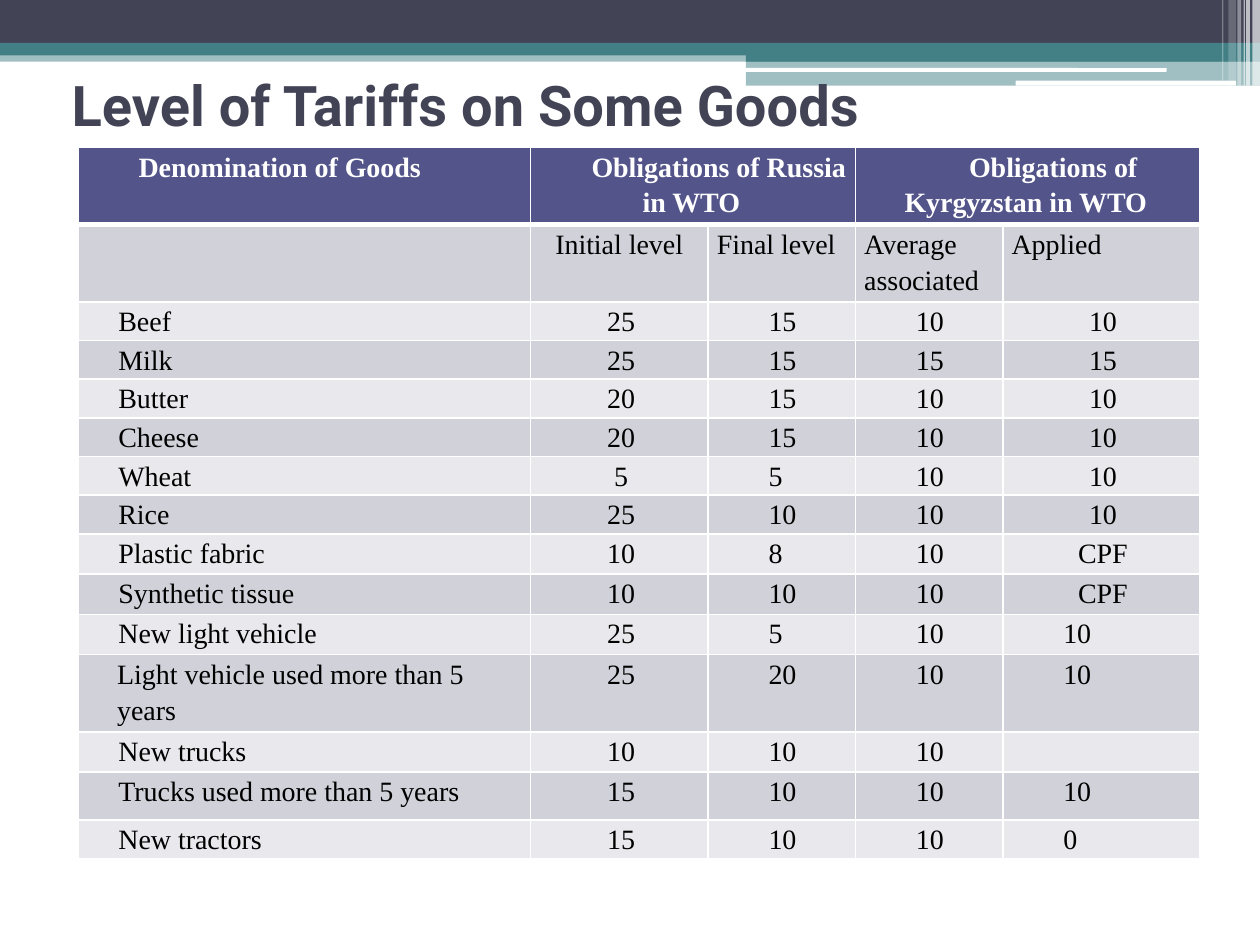
import pptx
import pptx.util
import pptx.dml.color
import pptx.enum.shapes
import pptx.enum.text
import pptx.oxml
import pptx.oxml.ns
import lxml.etree

Inches = pptx.util.Inches
Pt = pptx.util.Pt
KIND = pptx.enum.shapes.MSO_SHAPE
ALIGN = pptx.enum.text.PP_ALIGN
MID = pptx.enum.text.MSO_ANCHOR.MIDDLE
qn = pptx.oxml.ns.qn

INK, TEAL, WHITE = "424456", "438086", "FFFFFF"
HEAD, DARK, LIGHT = "53548A", "D1D1DA", "E9E9ED"
WIDTHS = [3.59, 1.41, 1.17, 1.17, 1.56]
TOPS = ["Denomination of Goods", "Obligations of Russia in WTO ", None,
        "Obligations of Kyrgyzstan in WTO ", None]
SUBS = [None, "Initial level", "Final level", "Average associated", "Applied "]
GOODS = [
    (0.3, "Beef", "25", "15", "10", "10"),
    (0.3, "Milk", "25", "15", "15", "15"),
    (0.3, "Butter", "20", "15", "10", "10"),
    (0.3, "Cheese", "20", "15", "10", "10"),
    (0.3, "Wheat", "5", "5", "10", "10"),
    (0.3, "Rice", "25", "10", "10", "10"),
    (0.32, "Plastic fabric", "10", "8", "10", "CPF"),
    (0.32, "Synthetic tissue", "10", "10", "10", "CPF"),
    (0.32, "New light vehicle", "25", "5", "10", "10"),
    (0.59, "Light vehicle used more than 5 years", "25", "20", "10", "10"),
    (0.32, "New trucks", "10", "10", "10", None),
    (0.38, "Trucks used more than 5 years", "15", "10", "10", "10"),
    (0.3, "New tractors", "15", "10", "10", "0"),
]


def color(code):
    return pptx.dml.color.RGBColor.from_string(code)


def write(frame, text, size=16, font="Times New Roman", ink="000000",
          bold=False, align=ALIGN.LEFT, left=0, first=0, space=1.15):
    para = frame.paragraphs[0]
    para.alignment = align
    para.line_spacing = space
    props = para._p.get_or_add_pPr()
    props.set("marL", str(Inches(left)))
    props.set("indent", str(Inches(first)))
    run = para.add_run()
    run.text = text
    run.font.size = Pt(size)
    run.font.name = font
    run.font.bold = bold
    run.font.color.rgb = color(ink)


def block(slide, x, y, w, h, fill, alpha=100, kind=KIND.RECTANGLE):
    shape = slide.shapes.add_shape(kind, Inches(x), Inches(y), Inches(w), Inches(h))
    shape.shadow.inherit = False
    shape.line.fill.background()
    shape.fill.solid()
    shape.fill.fore_color.rgb = color(fill)
    if alpha < 100:
        tone = shape._element.spPr.find(".//" + qn("a:srgbClr"))
        lxml.etree.SubElement(tone, qn("a:alpha"), val=str(alpha * 1000))


def banner(slide, x, y, w):
    block(slide, x, y + 0.4, w, 0.09, TEAL, 50)
    block(slide, x, y, w, 0.34, INK)
    block(slide, x, y + 0.34, w, 0.1, TEAL)
    block(slide, x + 5.92, y + 0.39, w - 5.92, 0.1, TEAL)
    block(slide, x + 5.92, y + 0.48, w - 5.92, 0.2, TEAL, 50)
    block(slide, x + 5.91, y + 0.54, 3.35, 0.03, WHITE, kind=KIND.ROUNDED_RECTANGLE)
    block(slide, x + 8.06, y + 0.64, 1.75, 0.04, WHITE, kind=KIND.ROUNDED_RECTANGLE)
    for gap, wide, high, alpha in [
        (0.06, 0.06, 0.68, 65), (0.11, 0.03, 0.68, 65), (0.13, 0.01, 0.68, 60),
        (0.18, 0.03, 0.68, 40), (0.25, 0.06, 0.64, 20), (0.3, 0.01, 0.64, 30),
    ]:
        block(slide, x + w - gap, y, wide, high, WHITE, alpha)


def title(slide, x, y, w, h):
    box = slide.shapes.add_textbox(Inches(x), Inches(y), Inches(w), Inches(h))
    frame = box.text_frame
    frame.word_wrap = True
    frame.vertical_anchor = MID
    write(frame, "Level of Tariffs on Some Goods", size=32, font="Roboto",
          ink=INK, bold=True, space=1)


def border(cell, top, base):
    props = cell._tc.get_or_add_tcPr()
    for spot, (side, width) in enumerate([("L", 1), ("R", 1), ("T", top), ("B", base)]):
        line = pptx.oxml.parse_xml(
            f'<a:ln{side} xmlns:a="http://schemas.openxmlformats.org/drawingml/2006/main"'
            f' w="{Pt(width)}"><a:solidFill><a:srgbClr val="{WHITE}"/></a:solidFill>'
            f'</a:ln{side}>')
        props.insert(spot, line)


def style(row, col, text):
    if row == 0:
        return dict(ink=WHITE, bold=True, left=0.03, first=0.38,
                    align=ALIGN.CENTER if col else ALIGN.JUSTIFY)
    if row == 1:
        return dict(align=ALIGN.CENTER if col == 1 else ALIGN.JUSTIFY)
    if col == 0:
        long = GOODS[row - 2][0] > 0.5
        return dict(left=0.24) if long else dict(left=0.03, first=0.22)
    if col == 1 or (col == 4 and row < 10):
        return dict(left=0.03, align=ALIGN.CENTER)
    return dict(left=0.03, first=0.38, align=ALIGN.JUSTIFY)


def tariffs(slide, x, y):
    rows = [(0.59, *TOPS), (0.59, *SUBS)] + GOODS
    high = sum(row[0] for row in rows)
    grid = slide.shapes.add_table(len(rows), len(WIDTHS), Inches(x), Inches(y),
                                  Inches(sum(WIDTHS)), Inches(high)).table
    for col, wide in enumerate(WIDTHS):
        grid.columns[col].width = Inches(wide)
    for col in (1, 3):
        grid.cell(0, col).merge(grid.cell(0, col + 1))
    for row, (tall, *texts) in enumerate(rows):
        grid.rows[row].height = Inches(tall)
        for col, text in enumerate(texts):
            cell = grid.cell(row, col)
            cell.margin_left = cell.margin_right = Inches(0.07)
            cell.margin_top = cell.margin_bottom = 0
            cell.fill.solid()
            cell.fill.fore_color.rgb = color(HEAD if row == 0 else DARK if row % 2 else LIGHT)
            border(cell, 3 if row == 1 else 1, 3 if row == 0 else 1)
            if text:
                write(cell.text_frame, text, **style(row, col, text))


def main():
    deck = pptx.Presentation()
    deck.slide_width, deck.slide_height = Inches(10), Inches(7.5)
    slide = deck.slides.add_slide(deck.slide_layouts[6])
    banner(slide, 0, 0, 10)
    title(slide, 0.47, 0.4, 9, 0.85)
    tariffs(slide, 0.62, 1.17)
    deck.save("out.pptx")


if __name__ == "__main__":
    main()
